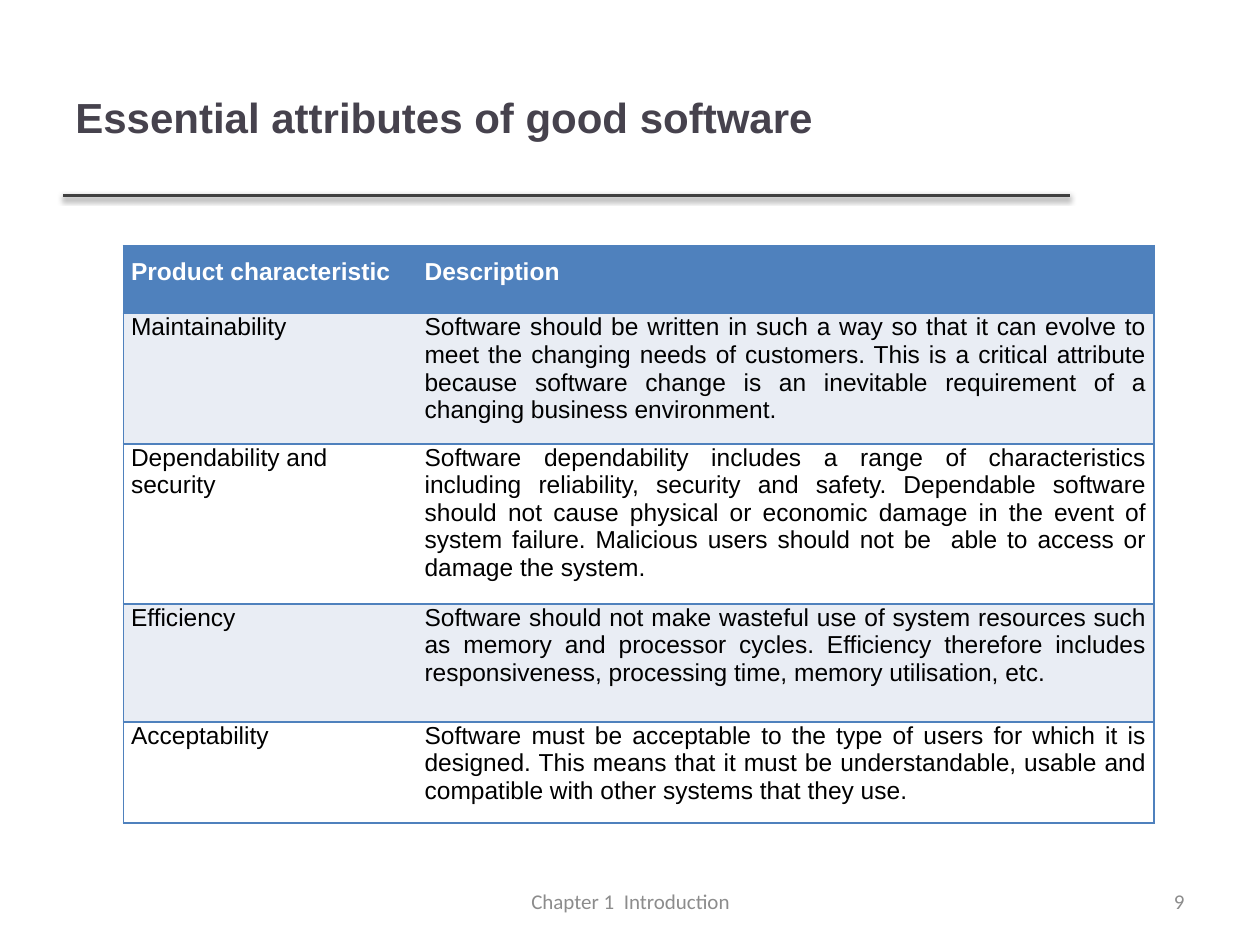
"""Build the slide on essential attributes of good software."""
import pptx
import pptx.dml.color
import pptx.enum.shapes
import pptx.enum.text
import pptx.oxml
import pptx.oxml.ns
import pptx.util

Inches = pptx.util.Inches
Pt = pptx.util.Pt
ALIGN = pptx.enum.text.PP_ALIGN
ANCHOR = pptx.enum.text.MSO_ANCHOR
NS = pptx.oxml.ns.nsdecls("a")
HUES = {"title": "46424D", "rule": "404040", "foot": "8C8C8C", "blue": "4F81BD",
        "band": "E9EDF4", "white": "FFFFFF", "black": "000000"}
ROWS = [
    ("Product characteristic", "Description", 0.54),
    ("Maintainability",
     "Software should be written in such a way so that it can evolve to meet the "
     "changing needs of customers. This is a critical attribute because software "
     "change is an inevitable requirement of a changing business environment.", 0.97),
    ("Dependability and security",
     "Software dependability includes a range of characteristics including "
     "reliability, security and safety. Dependable software should not cause "
     "physical or economic damage in the event of system failure. Malicious users "
     "should not be  able to access or damage the system.", 1.19),
    ("Efficiency",
     "Software should not make wasteful use of system resources such as memory and "
     "processor cycles. Efficiency therefore includes responsiveness, processing "
     "time, memory utilisation, etc.", 0.94),
    ("Acceptability",
     "Software must be acceptable to the type of users for which it is designed. "
     "This means that it must be understandable, usable and compatible with other "
     "systems that they use.", 0.75),
]


def color(name):
    """Return the named colour."""
    return pptx.dml.color.RGBColor.from_string(HUES[name])


def write(frame, text, size, face, hue, align, bold=False):
    """Write one styled run in the first paragraph."""
    frame.word_wrap = True
    para = frame.paragraphs[0]
    para.alignment = align
    run = para.add_run()
    run.text = text
    run.font.size = Pt(size)
    run.font.name = face
    run.font.bold = bold
    run.font.color.rgb = color(hue)


def label(slide, box, *style):
    """Add a text box with its text centred in height."""
    frame = slide.shapes.add_textbox(*map(Inches, box)).text_frame
    frame.vertical_anchor = ANCHOR.MIDDLE
    write(frame, *style)


def header(slide, left, top, width, height):
    """Add the title and the shadowed rule below it."""
    label(slide, (left, top, width, height), "Essential attributes of good software",
          24, "Arial", "title", ALIGN.LEFT, True)
    base = Inches(top + height)
    rule = slide.shapes.add_connector(pptx.enum.shapes.MSO_CONNECTOR.STRAIGHT,
                                      Inches(left), base, Inches(left + width), base)
    rule.line.color.rgb = color("rule")
    rule.line.width = Pt(2)
    rule._element.spPr.append(pptx.oxml.parse_xml(
        f'<a:effectLst {NS}><a:outerShdw blurRad="{Pt(3.1)}" dist="{Pt(1.6)}" '
        f'dir="5400000" rotWithShape="0"><a:srgbClr val="{HUES["black"]}">'
        '<a:alpha val="38000"/></a:srgbClr></a:outerShdw></a:effectLst>'))


def border(cell, sides):
    """Draw the given sides of a cell and clear the others."""
    props = cell._tc.get_or_add_tcPr()
    for side in "LRTB":
        paint = (f'<a:solidFill><a:srgbClr val="{HUES["blue"]}"/></a:solidFill>'
                 if side in sides else "<a:noFill/>")
        props.append(pptx.oxml.parse_xml(
            f'<a:ln{side} {NS} w="{Pt(1)}">{paint}</a:ln{side}>'))


def grid(slide, left, top, width, height):
    """Add the table of attributes."""
    table = slide.shapes.add_table(len(ROWS), 2, Inches(left), Inches(top),
                                   Inches(width), Inches(height)).table
    first = 2.33
    for col, span in zip(table.columns, (first, width - first)):
        col.width = Inches(span)
    for r, (*texts, tall) in enumerate(ROWS):
        table.rows[r].height = Inches(tall)
        head = r == 0
        fill = "blue" if head else "band" if r % 2 else "white"
        for c, text in enumerate(texts):
            cell = table.cell(r, c)
            border(cell, "RTB" if c else "LTB")
            cell.fill.solid()
            cell.fill.fore_color.rgb = color(fill)
            cell.margin_left = cell.margin_right = Inches(0.06)
            cell.margin_top = Inches(0.1 if head else 0)
            cell.margin_bottom = Inches(0.1)
            align = ALIGN.LEFT if text.startswith("Dependability") else ALIGN.JUSTIFY
            write(cell.text_frame, text, 14, "Arial",
                  "white" if head else "black", align, head)


def footer(slide, left, top, width, height):
    """Add the chapter name and the slide number."""
    style = 12, "Calibri", "foot"
    label(slide, (left, top, 3.17, height), "Chapter 1  Introduction",
          *style, ALIGN.CENTER)
    side = 2.33
    label(slide, (left + width - side, top, side, height), "9", *style, ALIGN.RIGHT)


def main():
    """Build and save the slide."""
    deck = pptx.Presentation()
    deck.slide_width, deck.slide_height = Inches(10), Inches(7.5)
    slide = deck.slides.add_slide(deck.slide_layouts[6])
    header(slide, 0.5, 0.3, 7.99, 1.25)
    footer(slide, 3.42, 6.95, 6.08, 0.4)
    grid(slide, 0.98, 1.95, 8.18, sum(row[-1] for row in ROWS))
    deck.save("out.pptx")


if __name__ == "__main__":
    main()
